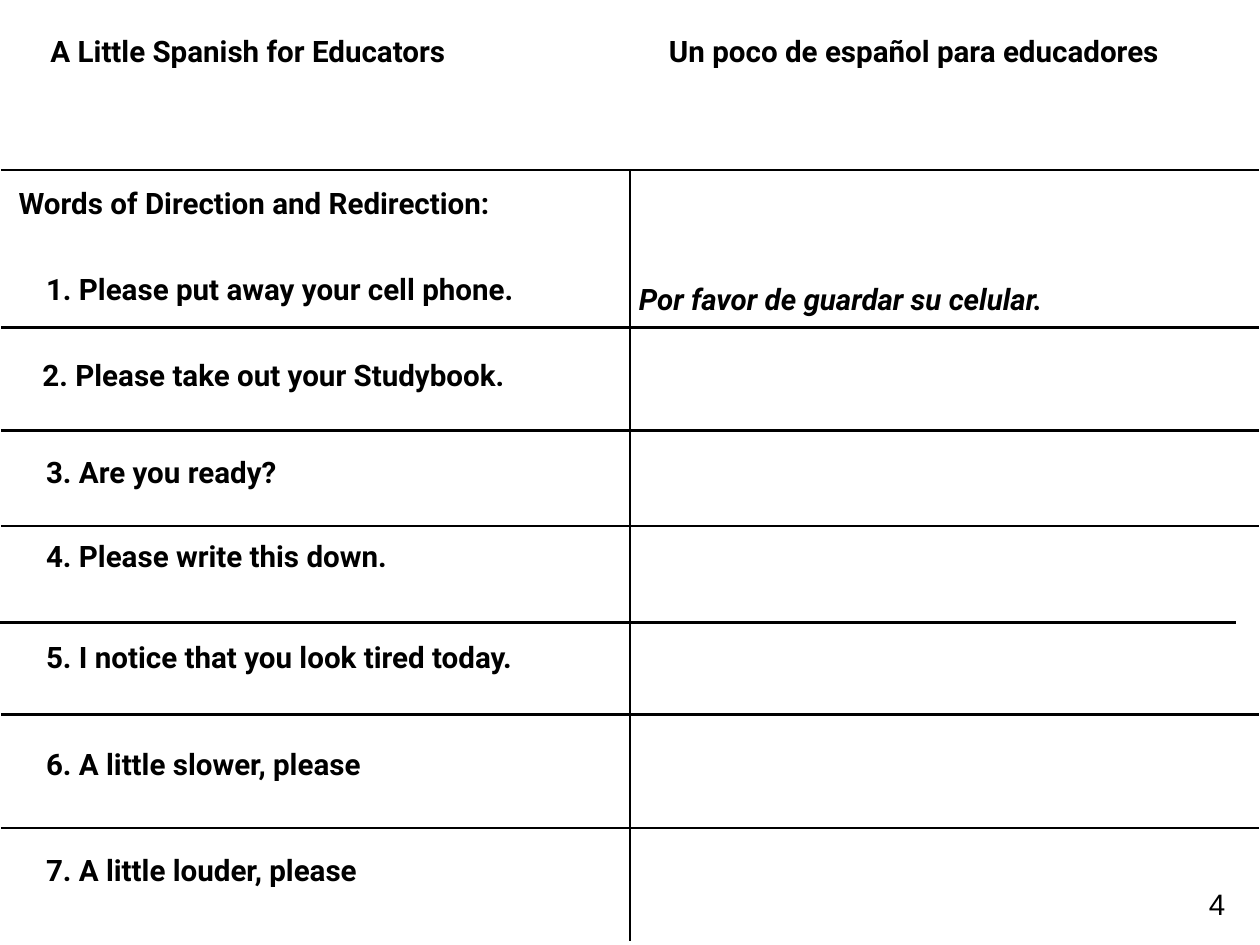
from lxml import etree
from pptx import Presentation
from pptx import util as u
from pptx.dml.color import RGBColor
from pptx.enum import shapes, text
from pptx.oxml import ns

SCALE = 9144  # EMU per px, 100 px to the inch
WIDTH, HEIGHT = 1422, 1067
MARGIN = 1
LINE_HEIGHT = 50
INK = "000000"

HEADER = (0, 0, WIDTH, 192)
GRID = (MARGIN, 192, WIDTH - 2 * MARGIN, 870)
MIDDLE = 710
# Distances below the top of the grid
RULES = [0, 178, 294, 402, 615, 743]
SHORT_RULE = 511
PHRASES = [
    ("Please put away your cell phone.", 109, 571),
    ("Please take out your Studybook.", 206, 600),
    ("Are you ready?", 316, 296),
    ("Please write this down.", 410, 418),
    ("I notice that you look tired today.", 525, 570),
    ("A little slower, please", 645, 385),
    ("A little louder, please", 765, 380),
]


def px(length):
    return u.Emu(length * SCALE)


def colour(value):
    return RGBColor.from_string(value)


def write(page, words, left, top, width, *, box=None, font="Roboto",
          bold=True, italic=False, align=text.PP_ALIGN.LEFT):
    """Put one line of text in the given box, or in a new text box."""
    if box is None:
        box = page.shapes.add_textbox(0, 0, 0, 0)
    box.left, box.top = px(left), px(top)
    box.width, box.height = px(width), px(LINE_HEIGHT)
    frame = box.text_frame
    frame.margin_left = frame.margin_right = px(6)
    frame.margin_top = frame.margin_bottom = px(6)
    frame.vertical_anchor = text.MSO_ANCHOR.MIDDLE
    frame.word_wrap = False
    frame.auto_size = text.MSO_AUTO_SIZE.SHAPE_TO_FIT_TEXT
    para = frame.paragraphs[0]
    para.alignment = align
    span = para.add_run()
    span.text = words
    span.font.name = font
    span.font.size = u.Pt(24)
    span.font.bold = bold
    span.font.italic = italic
    span.font.color.rgb = colour(INK)


def rule(page, x1, y1, x2, y2):
    line = page.shapes.add_connector(
        shapes.MSO_CONNECTOR.STRAIGHT, px(x1), px(y1), px(x2), px(y2))
    line.line.color.rgb = colour(INK)
    line.line.width = u.Pt(2)
    etree.SubElement(line._element.spPr, ns.qn("a:effectLst"))


def add_header(page, box):
    left, top, _, _ = box
    write(page, "A Little Spanish for Educators", left + 51, top + 32, 487,
          box=page.shapes.title)
    write(page, "Un poco de español para educadores", left + 749, top + 32, 608)


def add_grid(page, box):
    left, top, width, height = box
    for offset in RULES:
        rule(page, left, top + offset, left + width, top + offset)
    rule(page, 0, top + SHORT_RULE, 1395, top + SHORT_RULE)
    rule(page, left + MIDDLE, top, left + MIDDLE, top + height)


def add_phrases(page, box):
    left, top, _, _ = box
    write(page, "Words of Direction and Redirection:", left + 14, top + 12, 587)
    for number, (phrase, offset, width) in enumerate(PHRASES, 1):
        indent = 41 if number == 2 else 45
        write(page, f"{number}. {phrase}", left + indent, top + offset, width)
    write(page, "Por favor de guardar su celular.", left + MIDDLE + 4, top + 120,
          510, italic=True)


def add_page_number(page, number):
    write(page, str(number), WIDTH - 64, HEIGHT - 72, 31, font="Arial",
          bold=False, align=text.PP_ALIGN.CENTER)


def main():
    deck = Presentation()
    deck.slide_width, deck.slide_height = px(WIDTH), px(HEIGHT)
    title_only = deck.slide_layouts[5]
    page = deck.slides.add_slide(title_only)
    add_header(page, HEADER)
    add_grid(page, GRID)
    add_phrases(page, GRID)
    add_page_number(page, 4)
    deck.save("out.pptx")


if __name__ == "__main__":
    main()
